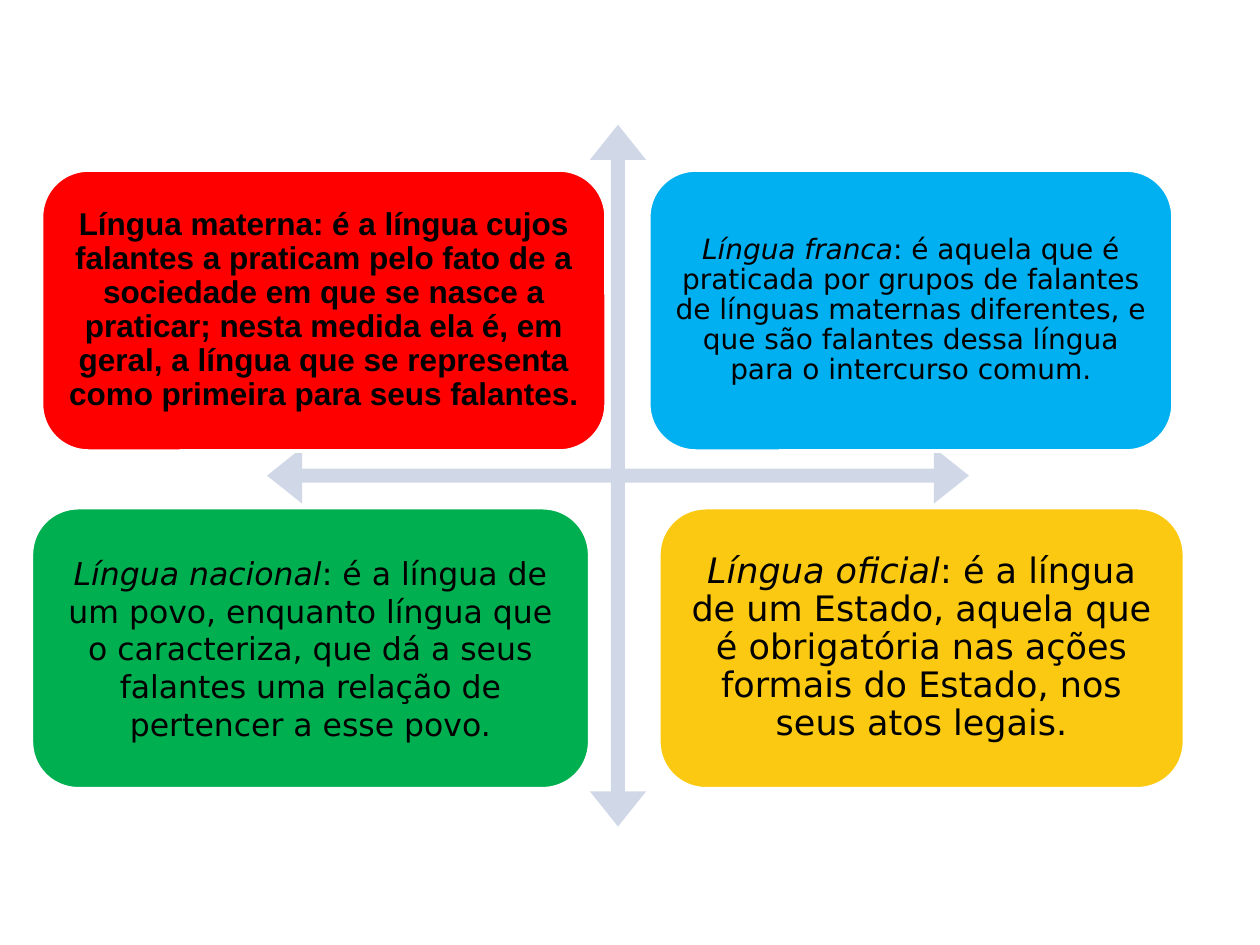
from pptx import Presentation
from pptx.dml.color import RGBColor
from pptx.enum.shapes import MSO_SHAPE
from pptx.enum.text import MSO_ANCHOR, PP_ALIGN
from pptx.util import Inches, Pt

BLACK = RGBColor(0x00, 0x00, 0x00)
WHITE = RGBColor(0xFF, 0xFF, 0xFF)
PALE_BLUE = RGBColor(0xD0, 0xD8, 0xE8)
RED = RGBColor(0xFF, 0x00, 0x00)
BLUE = RGBColor(0x00, 0xB0, 0xF0)
GREEN = RGBColor(0x00, 0xB0, 0x50)
YELLOW = RGBColor(0xFB, 0xC9, 0x11)

CARD_HEIGHT = 2.23
TOP_ROW, BOTTOM_ROW = 1.35, 4.03

# left, top, width, fill, font, size, bold, line spacing, margin, term, definition
CARDS = [
    (0.33, TOP_ROW, 4.48, RED, "Arial", 18, True, 0.9, 0.07, "",
     "Língua materna: é a língua cujos falantes a praticam pelo fato de a "
     "sociedade em que se nasce a praticar; nesta medida ela é, em geral, "
     "a língua que se representa como primeira para seus falantes."),
    (5.15, TOP_ROW, 4.16, BLUE, "DejaVu Sans", 16, False, 0.9, 0.07, "Língua franca",
     ": é aquela que é praticada por grupos de falantes de línguas maternas "
     "diferentes, e que são falantes dessa língua para o intercurso comum."),
    (0.25, BOTTOM_ROW, 4.43, GREEN, "DejaVu Sans", 18, False, 1.0, 0.07, "Língua nacional",
     ": é a língua de um povo, enquanto língua que o caracteriza, que dá a "
     "seus falantes uma relação de pertencer a esse povo."),
    (5.23, BOTTOM_ROW, 4.17, YELLOW, "DejaVu Sans", 20, False, 0.9, 0.08, "Língua oficial",
     ": é a língua de um Estado, aquela que é obrigatória nas ações formais "
     "do Estado, nos seus atos legais."),
]


def add_cross_arrow(page, left, top, size):
    arrow = page.shapes.add_shape(
        MSO_SHAPE.QUAD_ARROW, Inches(left), Inches(top), Inches(size), Inches(size))
    for index, value in enumerate((0.02, 0.04, 0.05)):
        arrow.adjustments[index] = value
    arrow.shadow.inherit = False
    arrow.fill.solid()
    arrow.fill.fore_color.rgb = PALE_BLUE
    arrow.line.fill.background()


def add_card(page, left, top, width, fill, font, size, bold, spacing, margin,
             term, definition):
    """Place a rounded card whose term is in italics, followed by its definition."""
    card = page.shapes.add_shape(
        MSO_SHAPE.ROUNDED_RECTANGLE,
        Inches(left), Inches(top), Inches(width), Inches(CARD_HEIGHT))
    card.shadow.inherit = False
    card.fill.solid()
    card.fill.fore_color.rgb = fill
    card.line.color.rgb = WHITE
    card.line.width = Pt(2)

    frame = card.text_frame
    frame.word_wrap = True
    frame.vertical_anchor = MSO_ANCHOR.MIDDLE
    frame.margin_left = frame.margin_right = Inches(margin)
    frame.margin_top = frame.margin_bottom = Inches(margin)
    para = frame.paragraphs[0]
    para.alignment = PP_ALIGN.CENTER
    para.line_spacing = spacing
    for text, italic in ((term, True), (definition, False)):
        if not text:
            continue
        span = para.add_run()
        span.text = text
        span.font.name = font
        span.font.size = Pt(size)
        span.font.bold = bold
        span.font.italic = italic
        span.font.color.rgb = BLACK


def main():
    deck = Presentation()
    deck.slide_width, deck.slide_height = Inches(10), Inches(7.5)
    page = deck.slides.add_slide(deck.slide_layouts[6])
    add_cross_arrow(page, 2.12, 0.99, 5.57)
    for card in CARDS:
        add_card(page, *card)
    deck.save("out.pptx")


if __name__ == "__main__":
    main()
